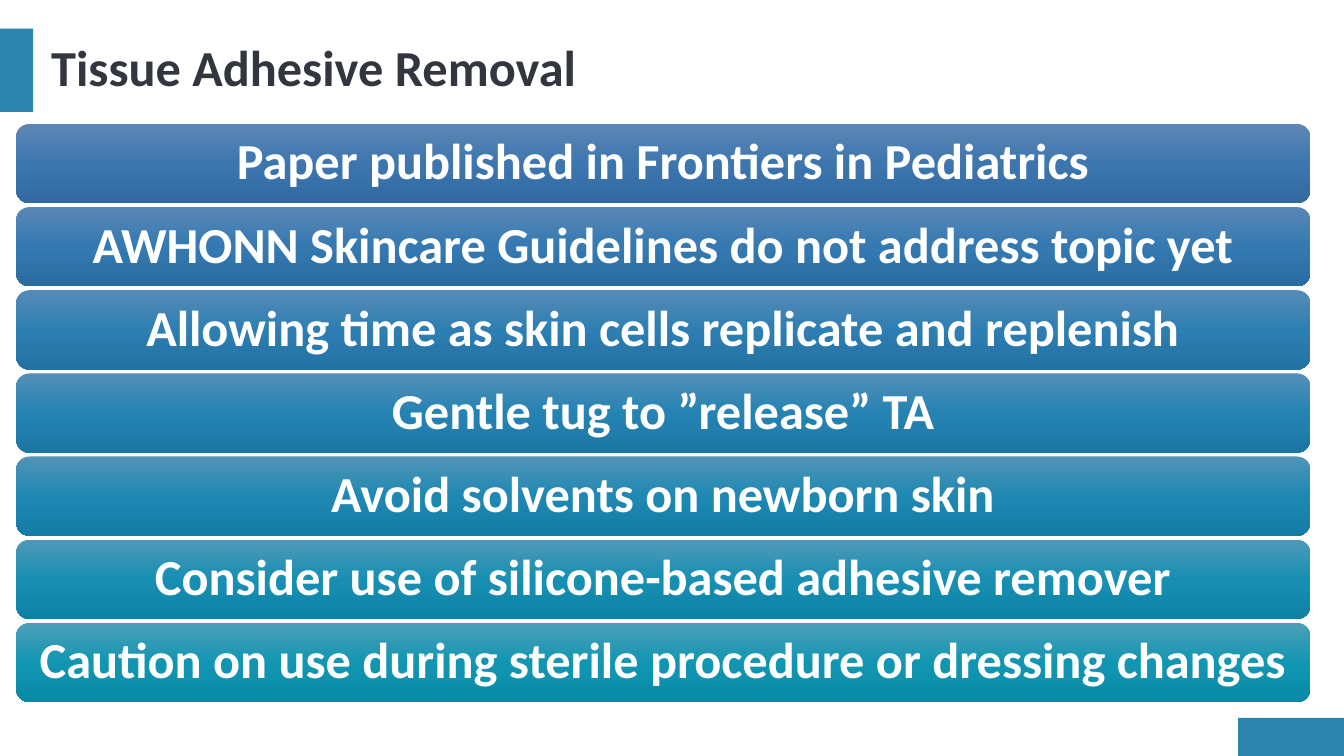
import copy

import pptx
import pptx.dml.color
import pptx.enum.shapes
import pptx.enum.text
import pptx.oxml.ns
import pptx.util

Pt = pptx.util.Pt
ALIGN = pptx.enum.text.PP_ALIGN
SHAPE = pptx.enum.shapes.MSO_SHAPE

ACCENT = "2C85AE"
INK = "32363F"
WHITE = "FFFFFF"

# Each bar: text, then gradient colours from top to bottom
BARS = [
    ("Paper published in Frontiers in Pediatrics", ("5E86B5", "3D76AF", "3169A0")),
    ("AWHONN Skincare Guidelines do not address topic yet", ("5A88B6", "3479B1", "2A6CA2")),
    ("Allowing time as skin cells replicate and replenish", ("568BB7", "2D7EB2", "2271A3")),
    ("Gentle tug to ”release” TA", ("538FB7", "2583B3", "1B76A4")),
    ("Avoid solvents on newborn skin", ("5094B7", "1E88B3", "147CA5")),
    ("Consider use of silicone-based adhesive remover", ("4E99B7", "178FB3", "0E82A5")),
    ("Caution on use during sterile procedure or dressing changes", ("4D9EB7", "1196B2", "0889A5")),
]
BAR_TOP, BAR_PITCH, BAR_HEIGHT = 88.5, 59.4, 56.7


def rgb(value):
    return pptx.dml.color.RGBColor.from_string(value)


class SlideBuilder:
    font = "Calibri"
    size = 36

    def __init__(self, slide):
        self.s = slide

    def shape(self, kind, x, y, w, h):
        sp = self.s.shapes.add_shape(kind, Pt(x), Pt(y), Pt(w), Pt(h))
        sp.shadow.inherit = False
        sp.line.fill.background()
        return sp

    def block(self, x, y, w, h):
        sp = self.shape(SHAPE.RECTANGLE, x, y, w, h)
        sp.fill.solid()
        sp.fill.fore_color.rgb = rgb(ACCENT)

    def add_text(self, sp, text, color, align, inset):
        tf = sp.text_frame
        tf.word_wrap = True
        tf.vertical_anchor = pptx.enum.text.MSO_ANCHOR.MIDDLE
        tf.margin_left = tf.margin_right = Pt(inset)
        p = tf.paragraphs[0]
        p.alignment = align
        p.line_spacing = 0.9
        r = p.add_run()
        r.text = text
        r.font.name = self.font
        r.font.size = Pt(self.size)
        r.font.bold = True
        r.font.color.rgb = rgb(color)

    def title(self, text, x, y, w, h):
        sp = self.s.shapes.add_textbox(Pt(x), Pt(y), Pt(w), Pt(h))
        self.add_text(sp, text, INK, ALIGN.LEFT, 7.2)

    def bar(self, text, colors, x, y, w, h):
        sp = self.shape(SHAPE.ROUNDED_RECTANGLE, x, y, w, h)
        sp.adjustments[0] = 0.17
        sp.fill.gradient()
        sp.fill.gradient_angle = 270
        # A new gradient has two stops; add the middle one
        gs_list = sp.element.spPr.find(".//" + pptx.oxml.ns.qn("a:gsLst"))
        gs_list.insert(1, copy.deepcopy(gs_list[0]))
        for stop, color, position in zip(sp.fill.gradient_stops, colors, (0, 0.5, 1)):
            stop.color.rgb = rgb(color)
            stop.position = position
        self.add_text(sp, text, WHITE, ALIGN.CENTER, 13.5)


def main():
    prs = pptx.Presentation()
    prs.slide_width, prs.slide_height = Pt(960), Pt(540)
    b = SlideBuilder(prs.slides.add_slide(prs.slide_layouts[6]))

    # Accent blocks and title
    b.block(884.3, 512.8, 75.7, 27.2)
    b.block(0, 20.4, 23.7, 59.6)
    b.title("Tissue Adhesive Removal", 29.5, 20.4, 907, 59.6)

    # Stack of gradient bars
    for i, (text, colors) in enumerate(BARS):
        b.bar(text, colors, 11.5, BAR_TOP + i * BAR_PITCH, 924.5, BAR_HEIGHT)

    prs.save("out.pptx")


if __name__ == "__main__":
    main()
